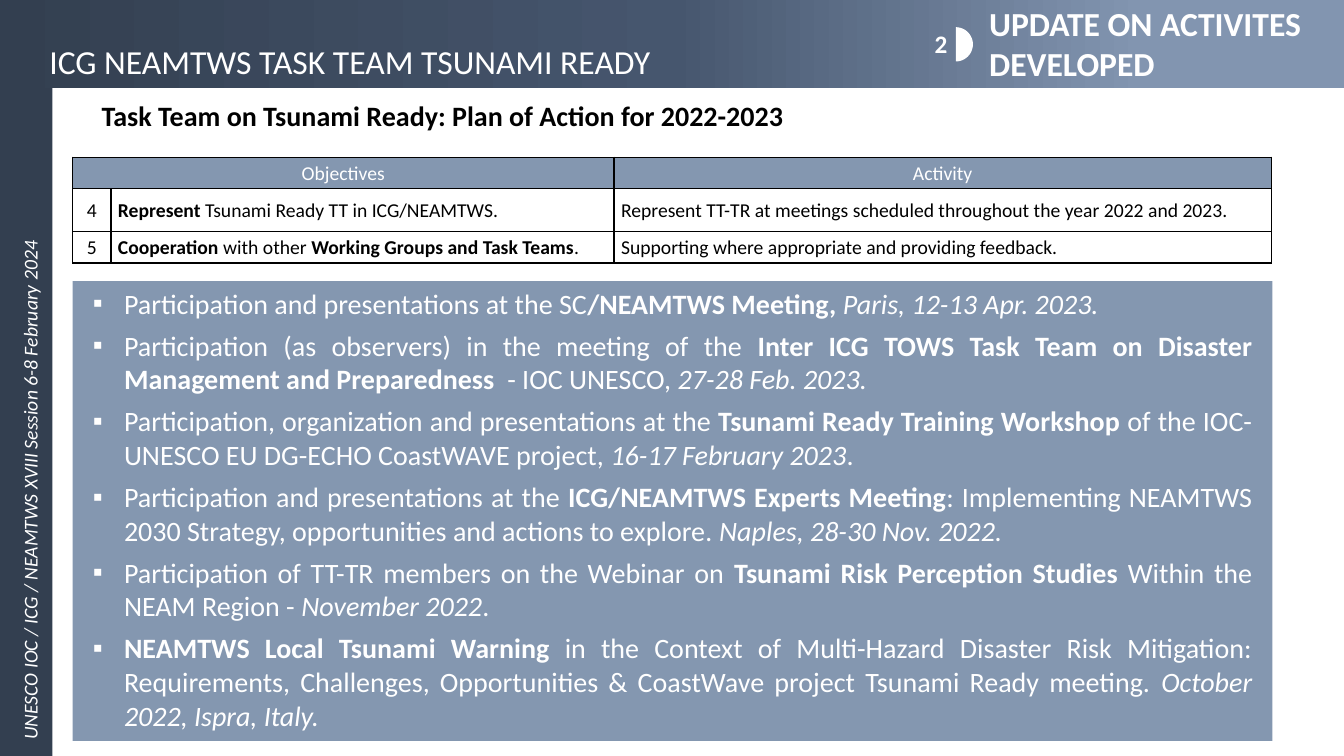
"""Build the Tsunami Ready task team slide on activities developed."""
import math
from copy import deepcopy

from lxml import etree
from pptx import Presentation
from pptx.dml.color import RGBColor
from pptx.enum.shapes import MSO_SHAPE
from pptx.enum.text import MSO_ANCHOR, MSO_AUTO_SIZE, PP_ALIGN
from pptx.oxml.ns import qn
from pptx.util import Inches, Pt

RECTANGLE = MSO_SHAPE.RECTANGLE
TOP, MIDDLE = MSO_ANCHOR.TOP, MSO_ANCHOR.MIDDLE
LEFT, CENTER, JUSTIFY = PP_ALIGN.LEFT, PP_ALIGN.CENTER, PP_ALIGN.JUSTIFY
NO_FIT = MSO_AUTO_SIZE.NONE

WHITE = RGBColor(0xFF, 0xFF, 0xFF)
BLACK = RGBColor(0x00, 0x00, 0x00)
NAVY = RGBColor(0x33, 0x3F, 0x50)
STEEL = RGBColor(0x84, 0x97, 0xB0)
HEADER_STOPS = [
    (0.15, RGBColor(0x82, 0x95, 0xB0)),
    (0.5, RGBColor(0x46, 0x56, 0x6E)),
    (1, NAVY),
]
FONT = "Calibri"
PLAIN, BOLD, ITALIC = "plain", "bold", "italic"

COLUMN_WIDTHS = [0.38, 4.99, 6.52]
ROW_HEIGHTS = [0.31, 0.43, 0.31]
PLAN_ROWS = [
    ("4", [("Represent", BOLD), (" Tsunami Ready TT in ICG/NEAMTWS.", PLAIN)],
     "Represent TT-TR at meetings scheduled throughout the year 2022 and 2023."),
    ("5", [("Cooperation", BOLD), (" with other ", PLAIN),
           ("Working Groups and Task Teams", BOLD), (".", PLAIN)],
     "Supporting where appropriate and providing feedback."),
]
ACTIVITIES = [
    [("Participation and presentations at the SC", PLAIN),
     ("/NEAMTWS Meeting,", BOLD), (" Paris, 12-13 Apr. 2023.", ITALIC)],
    [("Participation (as observers) in the meeting of the ", PLAIN),
     ("Inter ICG TOWS Task Team on Disaster Management and Preparedness ", BOLD),
     (" - IOC UNESCO, ", PLAIN), ("27-28 Feb. 2023.", ITALIC)],
    [("Participation, organization and presentations at the ", PLAIN),
     ("Tsunami Ready Training Workshop ", BOLD),
     ("of the IOC-UNESCO EU DG-ECHO CoastWAVE project, ", PLAIN),
     ("16-17 February 2023", ITALIC), (".", PLAIN)],
    [("Participation and presentations at the ", PLAIN),
     ("ICG/NEAMTWS Experts Meeting", BOLD),
     (": Implementing NEAMTWS 2030 Strategy, opportunities and actions to explore", PLAIN),
     (". Naples, 28-30 Nov. 2022.", ITALIC)],
    [("Participation of TT-TR members on the Webinar on ", PLAIN),
     ("Tsunami Risk Perception Studies ", BOLD),
     ("Within the NEAM Region - ", PLAIN), ("November 2022", ITALIC), (".", PLAIN)],
    [("NEAMTWS Local Tsunami Warning ", BOLD),
     ("in the Context of Multi-Hazard Disaster Risk Mitigation: Requirements, "
      "Challenges, Opportunities & CoastWave project Tsunami Ready meeting. ", PLAIN),
     ("October 2022, Ispra, Italy.", ITALIC)],
]


def write(para, spans, size, color, align=LEFT, after=0):
    """Fill a paragraph with styled runs."""
    para.alignment = align
    para.space_before = Pt(0)
    para.space_after = Pt(after)
    for text, style in spans:
        span = para.add_run()
        span.text = text
        font = span.font
        font.name, font.size, font.color.rgb = FONT, Pt(size), color
        font.bold, font.italic = style == BOLD, style == ITALIC


def set_frame(frame, anchor=TOP, insets=(0.1, 0.05, 0.1, 0.05), wrap=True):
    """Set the anchor, margins and wrapping of a text frame."""
    frame.auto_size, frame.word_wrap = NO_FIT, wrap
    frame.vertical_anchor = anchor
    (frame.margin_left, frame.margin_top,
     frame.margin_right, frame.margin_bottom) = map(Inches, insets)


def place(shape, left, top, width, height):
    """Move and size a shape in inches."""
    shape.left, shape.top = Inches(left), Inches(top)
    shape.width, shape.height = Inches(width), Inches(height)


def add_band(page, area, insets, spans, size):
    """Add a dark rectangular band with text."""
    band = page.shapes.add_shape(RECTANGLE, *map(Inches, area))
    band.shadow.inherit = False
    band.line.fill.background()
    band.fill.solid()
    band.fill.fore_color.rgb = NAVY
    set_frame(band.text_frame, MIDDLE, insets)
    write(band.text_frame.paragraphs[0], spans, size, WHITE)
    return band


def apply_gradient(shape, stops):
    """Fill a shape with a gradient running from right to left."""
    shape.fill.gradient()
    shape.fill.gradient_angle = 180
    stop_list = shape.fill._xPr.find(".//" + qn("a:gsLst"))
    while len(stop_list) < len(stops):
        stop_list.append(deepcopy(stop_list[0]))
    for stop, (position, color) in zip(shape.fill.gradient_stops, stops):
        stop.position, stop.color.rgb = position, color


def add_label(page, area, text, size, color, wrap=True):
    """Add a bold text box."""
    box = page.shapes.add_textbox(*map(Inches, area))
    set_frame(box.text_frame, wrap=wrap)
    para = box.text_frame.paragraphs[0]
    write(para, [(text, BOLD)], size, color)


def add_half_disc(page, left, top, width, height):
    """Add a white half disc with its flat side on the left."""
    middle, steps = top + height / 2, 24
    angles = [math.pi * (step / steps - 0.5) for step in range(steps + 1)]
    points = [(Inches(left + width * math.cos(angle)),
               Inches(middle + height / 2 * math.sin(angle))) for angle in angles]
    builder = page.shapes.build_freeform(*points[0])
    builder.add_line_segments(points[1:], close=True)
    disc = builder.convert_to_shape()
    disc.shadow.inherit = False
    disc.fill.solid()
    disc.fill.fore_color.rgb = WHITE
    disc.line.fill.background()


def border_cell(cell):
    """Draw a thin black line on each side of a cell."""
    properties = cell._tc.get_or_add_tcPr()
    for side in ("lnL", "lnR", "lnT", "lnB"):
        line = etree.SubElement(properties, qn("a:" + side), w=str(Pt(1)))
        fill = etree.SubElement(line, qn("a:solidFill"))
        etree.SubElement(fill, qn("a:srgbClr"), val=str(BLACK))


def fill_cell(cell, spans, color=BLACK, align=LEFT):
    """Write the text of a table cell."""
    cell.vertical_anchor = MIDDLE
    para = cell.text_frame.paragraphs[0]
    write(para, spans, 14, color, align, after=8)
    para.line_spacing = 1.07


def add_plan_table(page):
    """Add the table of objectives and activities."""
    frame = page.shapes.add_table(
        len(ROW_HEIGHTS), len(COLUMN_WIDTHS), Inches(0.72), Inches(1.56),
        Inches(sum(COLUMN_WIDTHS)), Inches(sum(ROW_HEIGHTS)))
    table = frame.table
    for column, width in zip(table.columns, COLUMN_WIDTHS):
        column.width = Inches(width)
    for index, (row, height) in enumerate(zip(table.rows, ROW_HEIGHTS)):
        row.height = Inches(height)
        for cell in row.cells:
            border_cell(cell)
            cell.margin_left = cell.margin_right = Inches(0.07)
            cell.margin_top = cell.margin_bottom = 0
            if index == 0:
                cell.fill.solid()
                cell.fill.fore_color.rgb = STEEL
            else:
                cell.fill.background()
    table.cell(0, 0).merge(table.cell(0, 1))
    for column, heading in ((0, "Objectives"), (2, "Activity")):
        fill_cell(table.cell(0, column), [(heading, PLAIN)], WHITE, CENTER)
    for index, (number, objective, activity) in enumerate(PLAN_ROWS, 1):
        fill_cell(table.cell(index, 0), [(number, PLAIN)], align=CENTER)
        fill_cell(table.cell(index, 1), objective)
        fill_cell(table.cell(index, 2), [(activity, PLAIN)])


def fill_activities(body):
    """Turn the body placeholder into the panel of activities."""
    place(body, 0.72, 2.79, 11.9, 4.56)
    body.fill.solid()
    body.fill.fore_color.rgb = STEEL
    frame = body.text_frame
    set_frame(frame, insets=(0.2, 0.05, 0.2, 0.05))
    for index, spans in enumerate(ACTIVITIES):
        para = frame.add_paragraph() if index else frame.paragraphs[0]
        properties = para._p.get_or_add_pPr()
        properties.set("marL", str(Inches(0.31)))
        properties.set("indent", str(-Inches(0.31)))
        etree.SubElement(properties, qn("a:buChar"), char="▪")
        write(para, spans, 20, WHITE, JUSTIFY, after=6)


def main():
    """Build and save the slide."""
    deck = Presentation()
    deck.slide_width, deck.slide_height = Inches(13.33), Inches(7.5)
    page = deck.slides.add_slide(deck.slide_layouts[1])
    title, body = page.placeholders
    side = add_band(page, (0, 0.86, 0.52, 6.64), (0.12, 0.28, 0.1, 0.16), [
        ("UNESCO IOC / ICG / NEAMTWS XVIII Session 6-8 February 2024", ITALIC)], 14)
    side.text_frame._txBody.bodyPr.set("vert", "vert270")
    header = add_band(page, (0, 0, 13.33, 0.87), (0.49, 0.39, 0.43, 0.05), [
        ("ICG NEAMTWS TASK TEAM TSUNAMI READY", PLAIN)], 24)
    apply_gradient(header, HEADER_STOPS)
    fill_activities(body)
    add_plan_table(page)
    add_label(page, (0.91, 0.93, 8.24, 0.45),
              "Task Team on Tsunami Ready: Plan of Action for 2022-2023", 20, BLACK)
    place(title, 9.71, -0.02, 3.62, 0.91)
    set_frame(title.text_frame)
    write(title.text_frame.paragraphs[0],
          [("UPDATE ON ACTIVITES DEVELOPED", BOLD)], 24, WHITE)
    page.shapes._spTree.append(title._element)
    add_half_disc(page, 9.48, 0.27, 0.17, 0.34)
    add_label(page, (9.17, 0.23, 0.22, 0.4), "2", 18, WHITE, wrap=False)
    deck.save("out.pptx")


if __name__ == "__main__":
    main()
